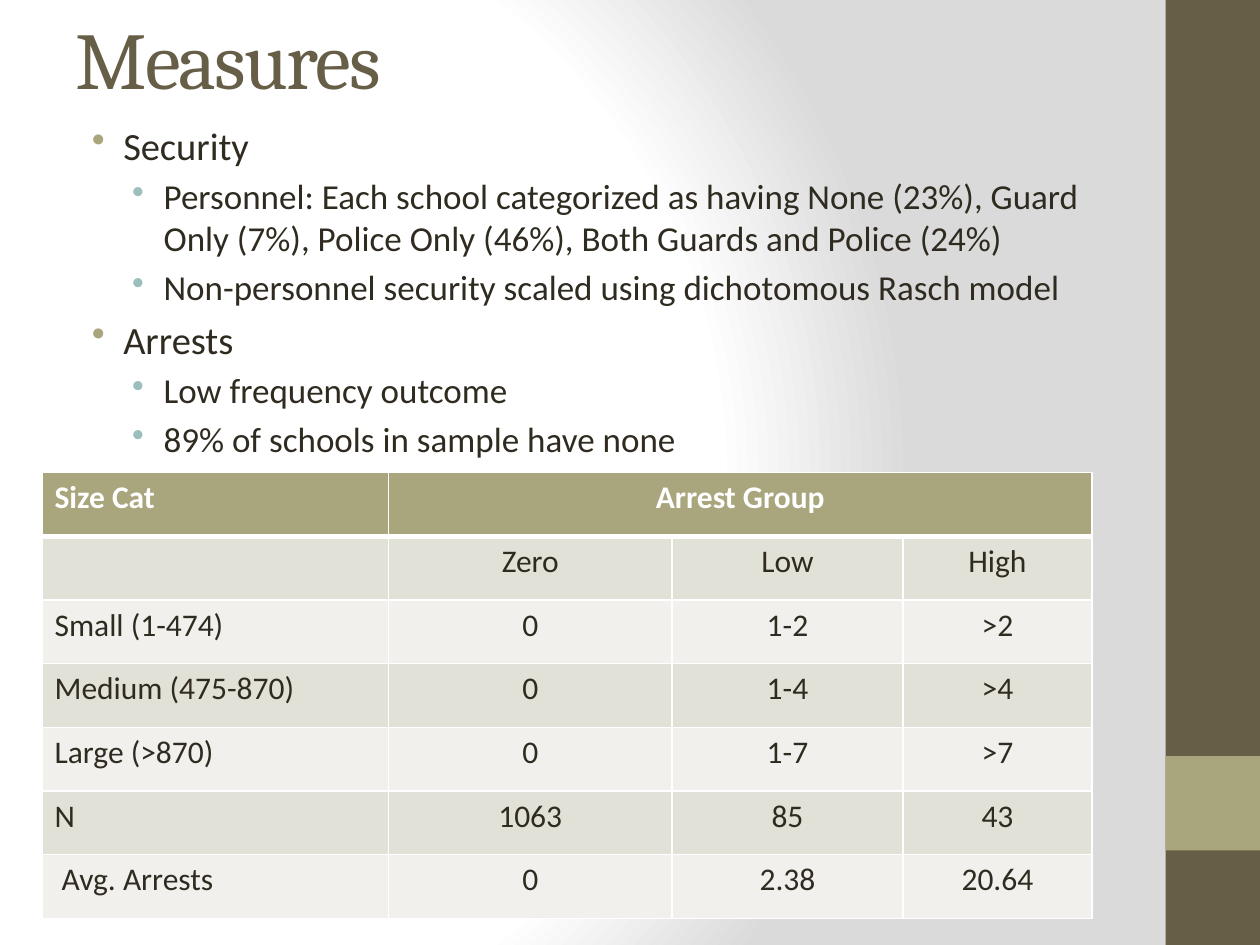
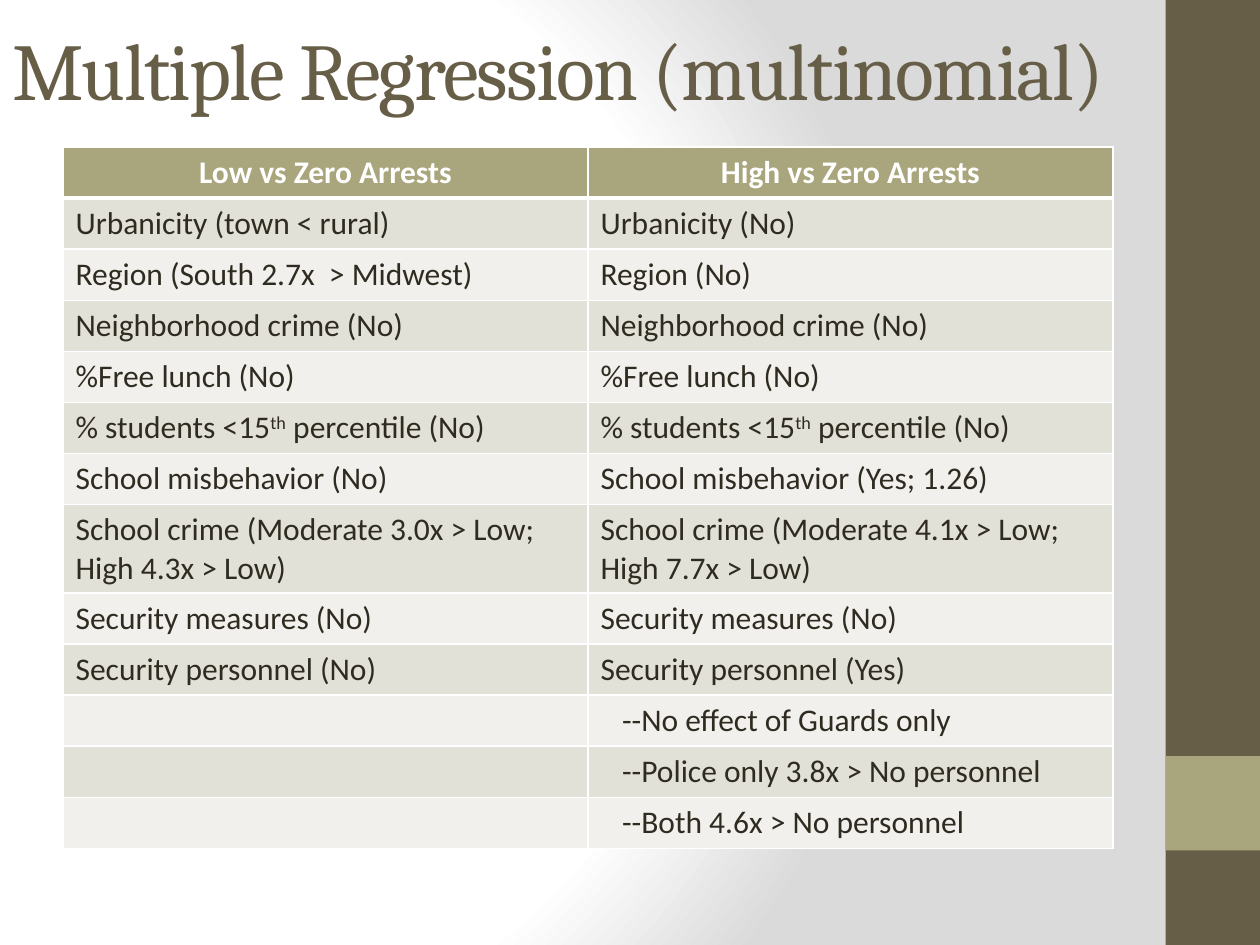
from lxml.etree import SubElement
from pptx import Presentation
from pptx.dml.color import RGBColor
from pptx.enum.shapes import MSO_SHAPE as SHAPE
from pptx.enum.text import MSO_ANCHOR as ANCHOR, PP_ALIGN as ALIGN
from pptx.oxml import parse_xml
from pptx.oxml.ns import nsdecls, qn
from pptx.util import Inches, Pt

BROWN, OLIVE, TEAL, INK, WHITE = "675E47", "A9A57C", "9CBEBD", "2F2B20", "FFFFFF"
BANDS = ["F1F0EC", "E2E1D7"]
U = Inches(10) / 120


def rgb(color):
    return RGBColor.from_string(color)


def add_run(p, text, size, color, font="Calibri", bold=False):
    r = p.add_run()
    r.text = text
    r.font.size, r.font.name, r.font.bold = Pt(size), font, bold
    r.font.color.rgb = rgb(color)
    return r._r.get_or_add_rPr()


prs = Presentation()
prs.slide_width, prs.slide_height = int(120 * U), int(90 * U)

master = prs.slide_master
master.background.fill.solid()
solid = master.element.find(".//" + qn("p:bgPr")).find(qn("a:solidFill"))
stops = "".join(
    f'<a:gs pos="{pos}000"><a:srgbClr val="{color}"/></a:gs>'
    for pos, color in [(0, WHITE), (75, WHITE), (100, "DADADA")])
solid.getparent().replace(solid, parse_xml(
    f'<a:gradFill {nsdecls("a")} rotWithShape="1"><a:gsLst>{stops}</a:gsLst>'
    '<a:path path="circle"><a:fillToRect l="20000" t="50000" r="100000" b="50000"/>'
    '</a:path></a:gradFill>'))

bullets = [
    (0, "Security"),
    (1, "Personnel: Each school categorized as having None (23%), Guard Only (7%), "
        "Police Only (46%), Both Guards and Police (24%)"),
    (1, "Non-personnel security scaled using dichotomous Rasch model"),
    (0, "Arrests"),
    (1, "Low frequency outcome"),
    (1, "89% of schools in sample have none"),
]
levels = [(22, 0.38, OLIVE), (20, 0.7, TEAL)]

arrest_groups = [
    ["Size Cat", "Arrest Group", "", ""],
    ["", "Zero", "Low", "High"],
    ["Small (1-474)", "0", "1-2", ">2"],
    ["Medium (475-870)", "0", "1-4", ">4"],
    ["Large (>870)", "0", "1-7", ">7"],
    ["N", "1063", "85", "43"],
    [" Avg. Arrests", "0", "2.38", "20.64"],
]
regression = [
    ["Low vs Zero Arrests", "High vs Zero Arrests"],
    ["Urbanicity (town < rural)", "Urbanicity (No)"],
    ["Region (South 2.7x  > Midwest)", "Region (No)"],
    ["Neighborhood crime (No)"] * 2,
    ["%Free lunch (No)"] * 2,
    ["% students <15^th^ percentile (No)"] * 2,
    ["School misbehavior (No)", "School misbehavior (Yes; 1.26)"],
    ["School crime (Moderate 3.0x > Low; High 4.3x > Low)",
     "School crime (Moderate 4.1x > Low; High 7.7x > Low)"],
    ["Security measures (No)"] * 2,
    ["Security personnel (No)", "Security personnel (Yes)"],
    ["", "--No effect of Guards only"],
    ["", "--Police only 3.8x > No personnel"],
    ["", "--Both 4.6x > No personnel"],
]

pages = [
    ("Measures", (6, 1, 100, 9), bullets, arrest_groups, (4, 45), [33, 27, 22, 18], 6.07, {1, 2, 3}),
    ("Multiple Regression (multinomial)", (0, 1, 119, 11), [], regression, (6, 14), [50, 50], 4.87, set()),
]

for title, title_box, body, rows, (left, top), widths, row_height, centred in pages:
    s = prs.slides.add_slide(prs.slide_layouts[6])

    for y, height, color in [(0, 90, BROWN), (72, 9, OLIVE)]:
        sp = s.shapes.add_shape(SHAPE.RECTANGLE, *[int(v * U) for v in (111, y, 9, height)])
        sp.shadow.inherit = False
        sp.fill.solid()
        sp.fill.fore_color.rgb = rgb(color)
        sp.line.fill.background()

    tf = s.shapes.add_textbox(*[int(v * U) for v in title_box]).text_frame
    tf.word_wrap, tf.vertical_anchor = True, ANCHOR.MIDDLE
    add_run(tf.paragraphs[0], title, 46, BROWN, "Cambria").set("spc", "-100")

    if body:
        tf = s.shapes.add_textbox(*[int(v * U) for v in (6, 11, 100, 73)]).text_frame
        tf.word_wrap = True
        for i, (level, text) in enumerate(body):
            size, indent, color = levels[level]
            p = tf.add_paragraph() if i else tf.paragraphs[0]
            p.level = level
            pPr = p._p.get_or_add_pPr()
            pPr.set("marL", str(Inches(indent)))
            pPr.set("indent", str(Inches(-0.25)))
            SubElement(SubElement(pPr, qn("a:spcBef")), qn("a:spcPct")).set("val", "20000")
            SubElement(SubElement(pPr, qn("a:buClr")), qn("a:srgbClr")).set("val", color)
            SubElement(pPr, qn("a:buChar")).set("char", "•")
            add_run(p, text, size, INK)

    size = [int(v * U) for v in (left, top, sum(widths), row_height * len(rows))]
    table = s.shapes.add_table(len(rows), len(widths), *size).table
    for column, width in zip(table.columns, widths):
        column.width = int(width * U)
    for i, row in enumerate(rows):
        table.rows[i].height = int(row_height * U)
        for j, text in enumerate(row):
            cell = table.cell(i, j)
            tcPr = cell._tc.get_or_add_tcPr()
            for side in "LRTB":
                thick = (i, side) in [(0, "B"), (1, "T")]
                ln = SubElement(tcPr, qn(f"a:ln{side}"), w=str(Pt(3 if thick else 1)))
                SubElement(SubElement(ln, qn("a:solidFill")), qn("a:srgbClr")).set("val", WHITE)
            cell.fill.solid()
            cell.fill.fore_color.rgb = rgb(BANDS[i % 2] if i else OLIVE)
            p = cell.text_frame.paragraphs[0]
            if j in centred or (i == 0 and not centred):
                p.alignment = ALIGN.CENTER
            if text.startswith("--"):
                p._p.get_or_add_pPr().set("marL", str(Inches(0.17)))
            for k, part in enumerate(text.split("^") if text else []):
                rPr = add_run(p, part, 18, INK if i else WHITE, bold=i == 0)
                if k % 2:
                    rPr.set("baseline", "30000")
    if len(widths) == 4:
        table.cell(0, 1).merge(table.cell(0, 3))

prs.save("out.pptx")
